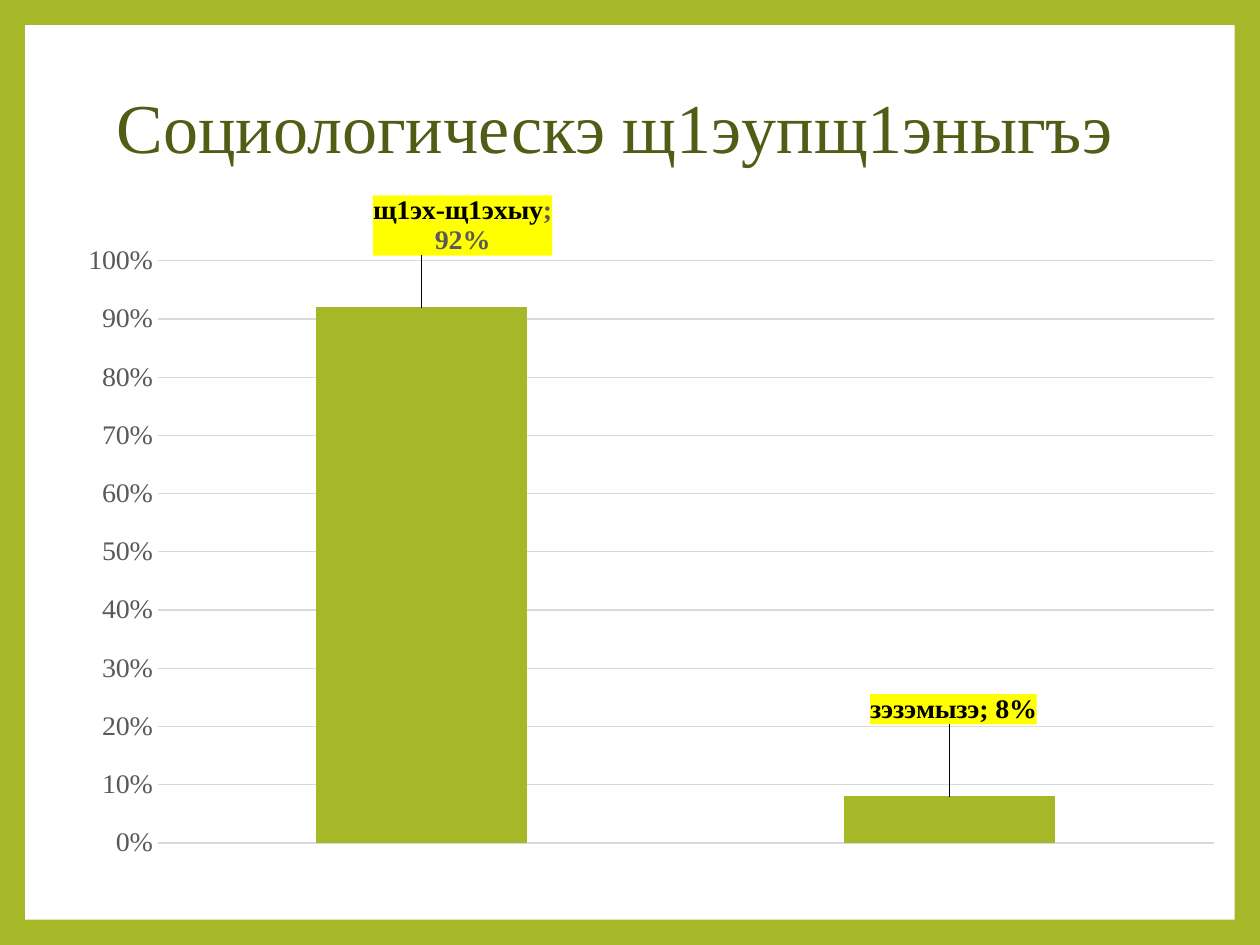
from lxml.etree import SubElement, fromstring
from pptx import Presentation
from pptx.chart.data import CategoryChartData
from pptx.dml.color import RGBColor
from pptx.enum.chart import XL_CHART_TYPE as ChartType
from pptx.enum.chart import XL_LABEL_POSITION as LabelPosition
from pptx.enum.chart import XL_TICK_MARK as TickMark
from pptx.enum.shapes import MSO_SHAPE as Shape
from pptx.enum.text import MSO_ANCHOR as Anchor
from pptx.oxml.ns import nsdecls, qn
from pptx.util import Inches, Pt

GREEN = RGBColor(0xA6, 0xB7, 0x27)
OLIVE = RGBColor(0x53, 0x5C, 0x14)
GREY = RGBColor(0x59, 0x59, 0x59)
LIGHT_GREY = RGBColor(0xD9, 0xD9, 0xD9)
BLACK = RGBColor(0, 0, 0)
WHITE = RGBColor(0xFF, 0xFF, 0xFF)
YELLOW = RGBColor(0xFF, 0xFF, 0)

FONT = "Times New Roman"
WIDTH, HEIGHT, MARGIN = 10, 7.5, 0.2
ANSWERS = {"щ1эх-щ1эхыу": 0.92, "зэзэмызэ": 0.08}
# Per label: its runs with their colours, then its shift as shares of the chart
LABELS = [
    ([("щ1эх-щ1эхыу", BLACK), ("; 92%", GREY)], (0.035, -0.07)),
    ([("зэзэмызэ; 8%", BLACK)], (0.003, -0.1)),
]


def set_font(font, size, color, bold=False):
    font.name, font.size, font.bold = FONT, Pt(size), bold
    font.color.rgb = color


def add_frame(slide):
    """Green background with a white panel inside an even margin."""
    slide.background.fill.solid()
    slide.background.fill.fore_color.rgb = GREEN
    panel = slide.shapes.add_shape(
        Shape.RECTANGLE, Inches(MARGIN), Inches(MARGIN),
        Inches(WIDTH - 2 * MARGIN), Inches(HEIGHT - 2 * MARGIN))
    panel.shadow.inherit = False
    panel.fill.solid()
    panel.fill.fore_color.rgb = WHITE
    panel.line.fill.background()


def add_title(slide, text):
    box = slide.shapes.add_textbox(Inches(0.83), Inches(0.68), Inches(8.5), Inches(0.72))
    frame = box.text_frame
    frame.word_wrap = True
    frame.vertical_anchor = Anchor.MIDDLE
    paragraph = frame.paragraphs[0]
    paragraph.text = text
    paragraph.line_spacing = 0.9
    set_font(paragraph.font, 40, OLIVE)


def manual_layout(**values):
    layout = fromstring(f"<c:layout {nsdecls('c')}><c:manualLayout/></c:layout>")
    for name, value in values.items():
        SubElement(layout[0], qn(f"c:{name}")).set("val", str(value))
    return layout


def style_axes(chart):
    chart.category_axis.visible = False
    axis = chart.value_axis
    axis.minimum_scale, axis.maximum_scale, axis.major_unit = 0, 1, 0.1
    axis.major_tick_mark = axis.minor_tick_mark = TickMark.NONE
    axis.format.line.fill.background()
    axis.major_gridlines.format.line.color.rgb = LIGHT_GREY
    axis.major_gridlines.format.line.width = Pt(0.75)
    axis.tick_labels.number_format = "0%"
    axis.tick_labels.number_format_is_linked = False
    set_font(axis.tick_labels.font, 16, GREY)


def add_point_label(point, runs, shift):
    """Bold label on yellow, moved away from its usual place above the bar."""
    label = point.data_label
    paragraph = label.text_frame.paragraphs[0]
    for text, color in runs:
        run = paragraph.add_run()
        run.text = text
        set_font(run.font, 16, color, bold=True)
    label.position = LabelPosition.OUTSIDE_END
    rich_text = paragraph._p.getparent().getparent()
    rich_text.addprevious(manual_layout(x=shift[0], y=shift[1]))
    rich_text.addnext(fromstring(
        f"<c:spPr {nsdecls('c', 'a')}><a:solidFill>"
        f'<a:srgbClr val="{YELLOW}"/></a:solidFill></c:spPr>'))
    for name in ("showCatName", "showVal"):
        rich_text.getparent().find(qn(f"c:{name}")).set("val", "1")


def add_answer_chart(slide):
    data = CategoryChartData(number_format="0%")
    data.categories = ANSWERS.keys()
    data.add_series("Series 1", ANSWERS.values())
    chart = slide.shapes.add_chart(
        ChartType.COLUMN_CLUSTERED, Inches(0.35), Inches(1.55),
        Inches(9.29), Inches(5.59), data).chart
    chart.has_legend = chart.has_title = False
    set_font(chart.font, 16, GREY)
    style_axes(chart)

    plot = chart.plots[0]
    plot.gap_width = 150
    plot.vary_by_categories = False
    plot_area = chart._chartSpace.chart.plotArea
    for old_layout in plot_area.findall(qn("c:layout")):
        plot_area.remove(old_layout)
    plot_area.insert(0, manual_layout(
        layoutTarget="inner", xMode="edge", yMode="edge",
        x=0.097, y=0.051, w=0.903, h=0.865))

    series = plot.series[0]
    series.format.fill.solid()
    series.format.fill.fore_color.rgb = GREEN
    for index, (runs, shift) in enumerate(LABELS):
        add_point_label(series.points[index], runs, shift)
    labels = series.data_labels
    labels.show_value = labels.show_category_name = True
    labels.number_format, labels.number_format_is_linked = "0%", False
    set_font(labels.font, 16, GREY, bold=True)


def main():
    presentation = Presentation()
    presentation.slide_width = Inches(WIDTH)
    presentation.slide_height = Inches(HEIGHT)
    slide = presentation.slides.add_slide(presentation.slide_layouts[6])
    add_frame(slide)
    add_answer_chart(slide)
    add_title(slide, "Социологическэ щ1эупщ1эныгъэ")
    presentation.save("out.pptx")


if __name__ == "__main__":
    main()
